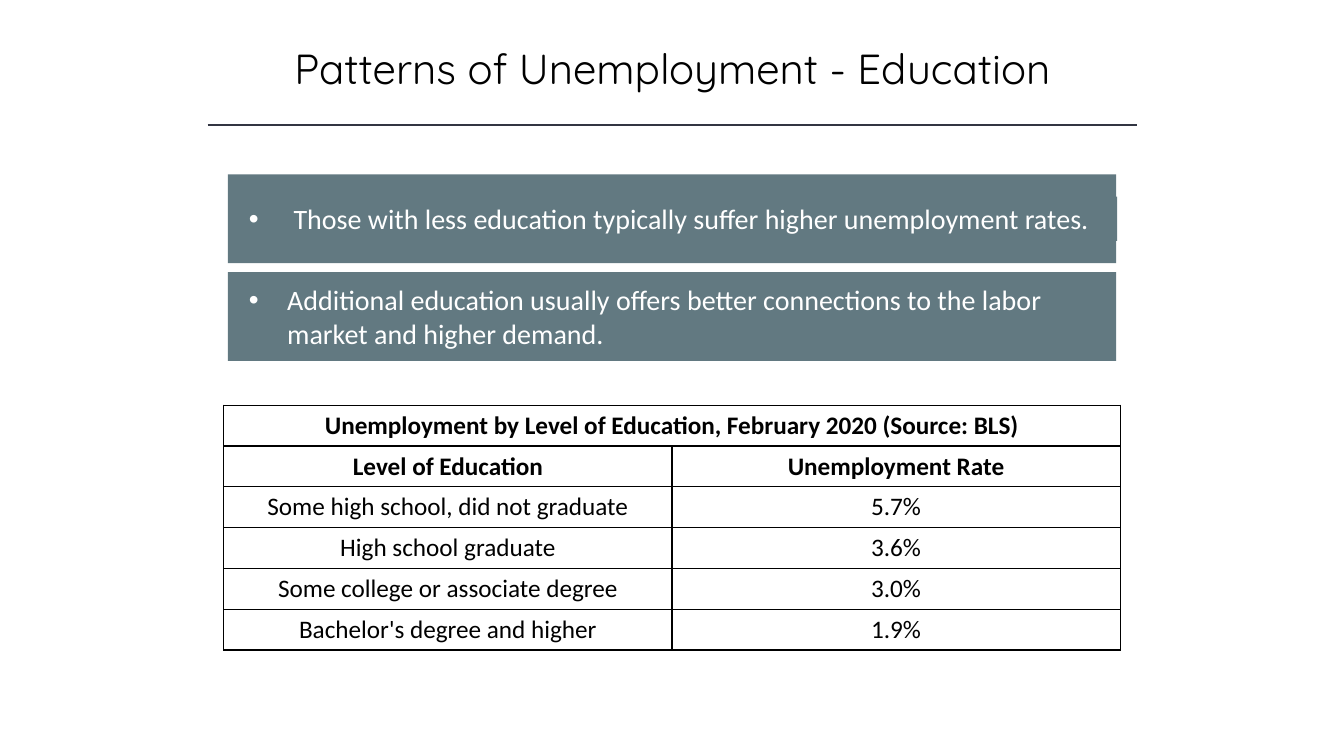
from lxml import etree
from pptx import Presentation
from pptx.dml.color import RGBColor
from pptx.enum.shapes import MSO_CONNECTOR, MSO_SHAPE
from pptx.enum.text import MSO_ANCHOR, PP_ALIGN
from pptx.oxml.ns import qn
from pptx.util import Inches, Pt

CENTER, LEFT = PP_ALIGN.CENTER, PP_ALIGN.LEFT
MIDDLE = MSO_ANCHOR.MIDDLE
RECTANGLE = MSO_SHAPE.RECTANGLE
STRAIGHT = MSO_CONNECTOR.STRAIGHT

COLORS = {"text": "000000", "rule": "323542", "panel": "627981", "panel_text": "FFFFFF"}

# Each point: text, then width and height of its text area
POINTS = [
    (" Those with less education typically suffer higher unemployment rates.", 8.71, 0.44),
    ("Additional education usually offers better connections to the labor "
     "market and higher demand.", 8.54, 0.77),
]
TABLE_TITLE = "Unemployment by Level of Education, February 2020 (Source: BLS)"
TABLE_ROWS = [
    ("Level of Education", "Unemployment Rate"),
    ("Some high school, did not graduate", "5.7%"),
    ("High school graduate", "3.6%"),
    ("Some college or associate degree", "3.0%"),
    ("Bachelor's degree and higher", "1.9%"),
]


def color(name):
    return RGBColor.from_string(COLORS[name])


def write(frame, text, size=18, font="Calibri", ink="text", bold=False, align=CENTER):
    para = frame.paragraphs[0]
    para.alignment = align
    span = para.add_run()
    span.text = text
    span.font.size = Pt(size)
    span.font.name = font
    span.font.bold = bold
    span.font.color.rgb = color(ink)
    return para


def add_bullet(para, indent):
    properties = para._p.get_or_add_pPr()
    properties.set("marL", str(Inches(indent)))
    properties.set("indent", str(-Inches(indent)))
    etree.SubElement(properties, qn("a:buFont"), typeface="Arial")
    etree.SubElement(properties, qn("a:buChar"), char="•")


def add_border(cell):
    properties = cell._tc.get_or_add_tcPr()
    for side in ("lnL", "lnR", "lnT", "lnB"):
        line = etree.SubElement(properties, qn(f"a:{side}"), w=str(Pt(1)))
        fill = etree.SubElement(line, qn("a:solidFill"))
        etree.SubElement(fill, qn("a:srgbClr"), val=COLORS["text"])


def add_title(page, left, top, width, height):
    box = page.shapes.add_textbox(Inches(left), Inches(top), Inches(width), Inches(height))
    box.text_frame.word_wrap = True
    write(box.text_frame, "Patterns of Unemployment - Education", size=30, font="Quicksand")


def add_rule(page, left, top, width):
    rule = page.shapes.add_connector(
        STRAIGHT, Inches(left), Inches(top), Inches(left + width), Inches(top))
    rule.line.color.rgb = color("rule")
    rule.line.width = Pt(1)
    etree.SubElement(rule._element.spPr, qn("a:effectLst"))


def add_block(group, left, top, width, height):
    block = group.shapes.add_shape(
        RECTANGLE, Inches(left), Inches(top), Inches(width), Inches(height))
    block.shadow.inherit = False
    block.fill.solid()
    block.fill.fore_color.rgb = color("panel")
    block.line.fill.background()
    return block


def add_points(page, left, top, width, height, pitch):
    """Stack one panel per point, with its bulleted text centred in height."""
    for index, (text, text_width, text_height) in enumerate(POINTS):
        panel_top = top + index * pitch
        group = page.shapes.add_group_shape()
        add_block(group, left, panel_top, width, height)
        text_top = panel_top + (height - text_height) / 2
        box = add_block(group, left + 0.11, text_top, text_width, text_height)
        frame = box.text_frame
        frame.word_wrap = True
        frame.vertical_anchor = MIDDLE
        para = write(frame, text, size=20, ink="panel_text", align=LEFT)
        add_bullet(para, 0.38)


def add_rates(page, left, top, width, height):
    rows = [(TABLE_TITLE, "")] + TABLE_ROWS
    table = page.shapes.add_table(
        len(rows), 2, Inches(left), Inches(top), Inches(width), Inches(height)).table
    table.first_row = table.horz_banding = False
    table.cell(0, 0).merge(table.cell(0, 1))
    for row_index, texts in enumerate(rows):
        for column_index, text in enumerate(texts):
            cell = table.cell(row_index, column_index)
            add_border(cell)
            cell.fill.background()
            if text:
                write(cell.text_frame, text, bold=row_index < 2)


def main():
    deck = Presentation()
    deck.slide_width, deck.slide_height = Inches(13.33), Inches(7.5)
    page = deck.slides.add_slide(deck.slide_layouts[6])
    add_title(page, 1.67, 0.37, 10, 0.61)
    add_rule(page, 2.06, 1.24, 9.22)
    add_points(page, 2.26, 1.73, 8.81, 0.88, pitch=0.97)
    add_rates(page, 2.22, 4.02, 8.89, 2.43)
    deck.save("out.pptx")


if __name__ == "__main__":
    main()
